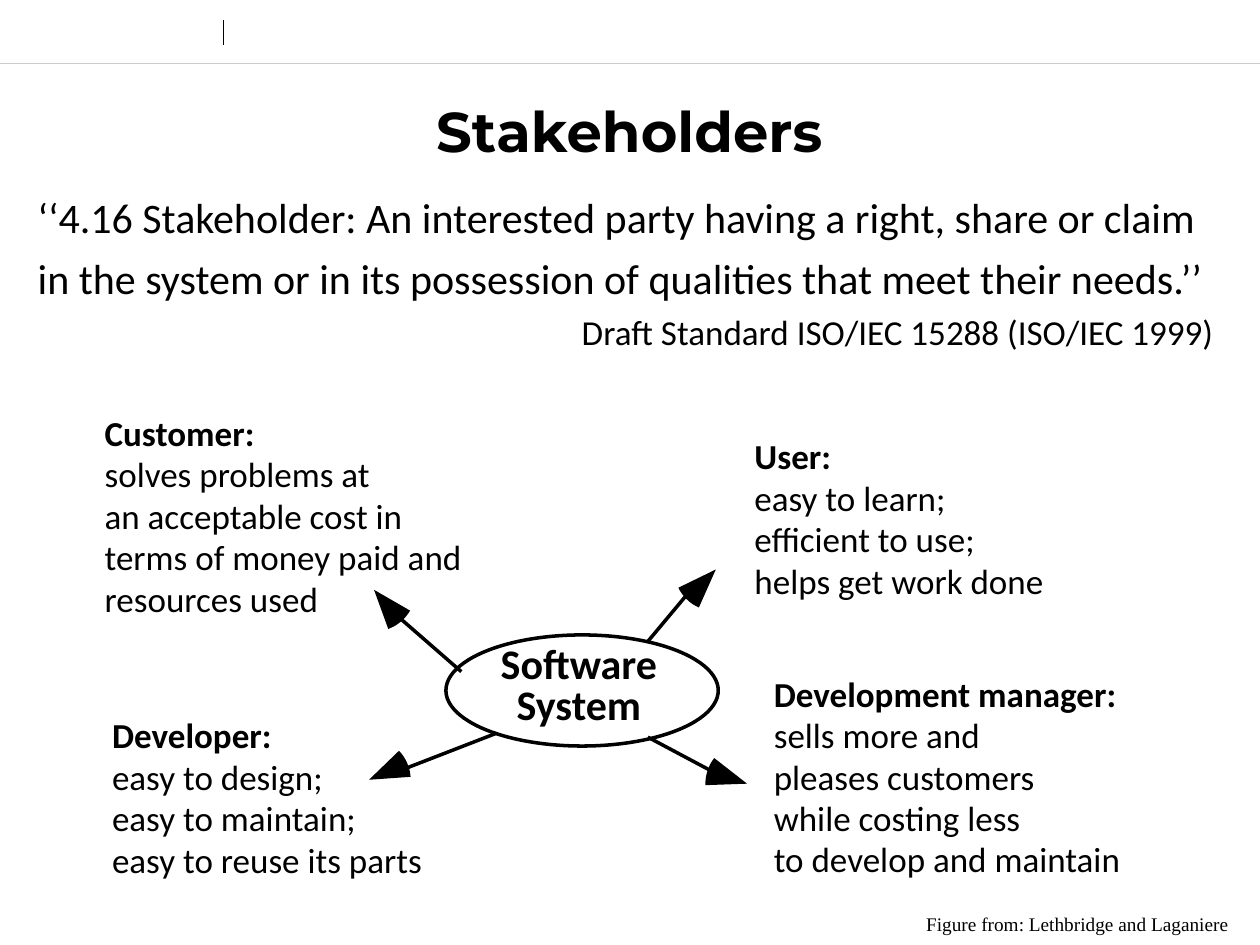
from dataclasses import dataclass
from math import cos, radians, sin

from lxml.etree import SubElement
from pptx import Presentation
from pptx.dml.color import RGBColor as RGB
from pptx.enum.shapes import MSO_CONNECTOR as CONN, MSO_SHAPE as SHAPE
from pptx.enum.text import MSO_ANCHOR as ANCHOR, PP_ALIGN as ALIGN
from pptx.oxml.ns import qn
from pptx.util import Cm, Pt


@dataclass(frozen=True)
class Theme:
    ink: RGB = RGB(0, 0, 0)
    paper: RGB = RGB(255, 255, 255)
    rule: RGB = RGB(0xCC, 0xCC, 0xCC)
    title_font: str = "Montserrat"
    body_font: str = "Calibri"
    caption_font: str = "Times New Roman"
    title: int = 32
    lead: int = 24
    body: int = 20
    caption: int = 11
    stroke: float = 2
    pitch: float = 23.7  # line pitch of the diagram texts, in points


@dataclass(frozen=True)
class Line:
    text: str
    size: int
    bold: bool = False
    align: ALIGN = ALIGN.LEFT
    font: str = "Calibri"


@dataclass(frozen=True)
class Stakeholder:
    name: str
    wishes: tuple[str, ...]
    box: tuple[float, float, float]  # left, top, width
    shaft: tuple[float, float, float, float]
    tip: tuple[float, float]
    angle: float  # direction from the tip back into the head, in degrees


T = Theme()
HEAD_RADIUS, HEAD_HALF_ANGLE, HEAD_STEPS = 0.84, 20, 8

STAKEHOLDERS = [
    Stakeholder("Customer:",
                ("solves problems at", "an acceptable cost in",
                 "terms of money paid and", "resources used"),
                (2.11, 8.3, 7.47), (9.3, 13.54, 7.9, 12.32), (7.54, 11.89), 50),
    Stakeholder("User:",
                ("easy to learn;", "efficient to use;", "helps get work done"),
                (15.21, 8.78, 5.94), (13.06, 12.93, 13.87, 11.96), (14.43, 11.48), 134),
    Stakeholder("Developer:",
                ("easy to design;", "easy to maintain;", "easy to reuse its parts"),
                (2.26, 14.4, 6.35), (10.01, 14.78, 8.1, 15.52), (7.44, 15.72), -24),
    Stakeholder("Development manager:",
                ("sells more and", "pleases customers", "while costing less",
                 "to develop and maintain"),
                (15.6, 13.56, 7.26), (13.06, 14.86, 14.3, 15.52), (15.06, 15.8), 198),
]


def add_text(s, box: tuple[float, ...], lines: list[Line], spacing=None,
             inset: tuple[float, float] = (0, 0), wrap: bool = False,
             anchor: ANCHOR = ANCHOR.TOP) -> None:
    tf = s.shapes.add_textbox(*map(Cm, box)).text_frame
    x, y = map(Cm, inset)
    frame = {"word_wrap": wrap, "vertical_anchor": anchor, "margin_left": x,
             "margin_right": x, "margin_top": y, "margin_bottom": y}
    for key, value in frame.items():
        setattr(tf, key, value)
    for i, line in enumerate(lines):
        p = tf.add_paragraph() if i else tf.paragraphs[0]
        p.alignment, p.line_spacing = line.align, spacing
        r = p.add_run()
        r.text = line.text
        for key, value in {"size": Pt(line.size), "bold": line.bold,
                           "name": line.font}.items():
            setattr(r.font, key, value)
        r.font.color.rgb = T.ink


def add_line(s, ends: tuple[float, ...], color: RGB, width: float) -> None:
    c = s.shapes.add_connector(CONN.STRAIGHT, *map(Cm, ends))
    c.line.color.rgb, c.line.width = color, Pt(width)
    SubElement(c._element.spPr, qn("a:effectLst"))


def add_head(s, tip: tuple[float, float], angle: float) -> None:
    """Arrowhead: a sector of a circle centred on the tip."""
    step = 2 * HEAD_HALF_ANGLE / HEAD_STEPS
    turns = [radians(angle - HEAD_HALF_ANGLE + i * step) for i in range(HEAD_STEPS + 1)]
    arc = [(Cm(tip[0] + HEAD_RADIUS * cos(a)), Cm(tip[1] + HEAD_RADIUS * sin(a)))
           for a in turns]
    fb = s.shapes.build_freeform(Cm(tip[0]), Cm(tip[1]))
    fb.add_line_segments(arc, close=True)
    sp = fb.convert_to_shape()
    sp.shadow.inherit = False
    sp.fill.solid()
    sp.fill.fore_color.rgb = T.ink
    sp.line.fill.background()


def add_stakeholder(s, st: Stakeholder) -> None:
    lines = [Line(st.name, T.body, True)] + [Line(w, T.body) for w in st.wishes]
    height = round(0.84 * len(lines), 2)
    add_text(s, (*st.box, height), lines, Pt(T.pitch))
    add_line(s, st.shaft, T.ink, T.stroke)
    add_head(s, st.tip, st.angle)


def main() -> None:
    prs = Presentation()
    prs.slide_width, prs.slide_height = Cm(25.4), Cm(19.05)
    s = prs.slides.add_slide(prs.slide_layouts[6])

    # Header rules
    add_line(s, (0, 1.27, 25.4, 1.27), T.rule, 0.25)
    add_line(s, (4.5, 0.41, 4.5, 0.91), T.ink, 0.5)

    # Title and definition
    add_text(s, (0.69, 1.73, 24, 1.8),
             [Line("Stakeholders", T.title, True, ALIGN.CENTER, T.title_font)],
             wrap=True, anchor=ANCHOR.MIDDLE)
    add_text(s, (0.51, 3.53, 24.21, 3.73), [
        Line("‘‘4.16 Stakeholder: An interested party having a right, share or claim "
             "in the system or in its possession of qualities that meet their needs.’’",
             T.lead),
        Line("Draft Standard ISO/IEC 15288 (ISO/IEC 1999)", T.body, align=ALIGN.RIGHT),
    ], 1.2, (0.25, 0.13), True)

    # Software system in the centre
    sp = s.shapes.add_shape(SHAPE.OVAL, Cm(8.99), Cm(12.8), Cm(5.49), Cm(2.24))
    sp.shadow.inherit = False
    sp.fill.solid()
    sp.fill.fore_color.rgb = T.paper
    sp.line.color.rgb, sp.line.width = T.ink, Pt(T.stroke)
    add_text(s, (9.87, 13.03, 3.6, 1.7),
             [Line(word, T.lead, True, ALIGN.CENTER) for word in ("Software", "System")],
             Pt(T.pitch))

    # Stakeholders with their arrows
    for st in STAKEHOLDERS:
        add_stakeholder(s, st)

    # Source of the figure
    add_text(s, (18.67, 18.39, 6.12, 0.48),
             [Line("Figure from: Lethbridge and Laganiere", T.caption, font=T.caption_font)])

    prs.save("out.pptx")


if __name__ == "__main__":
    main()
